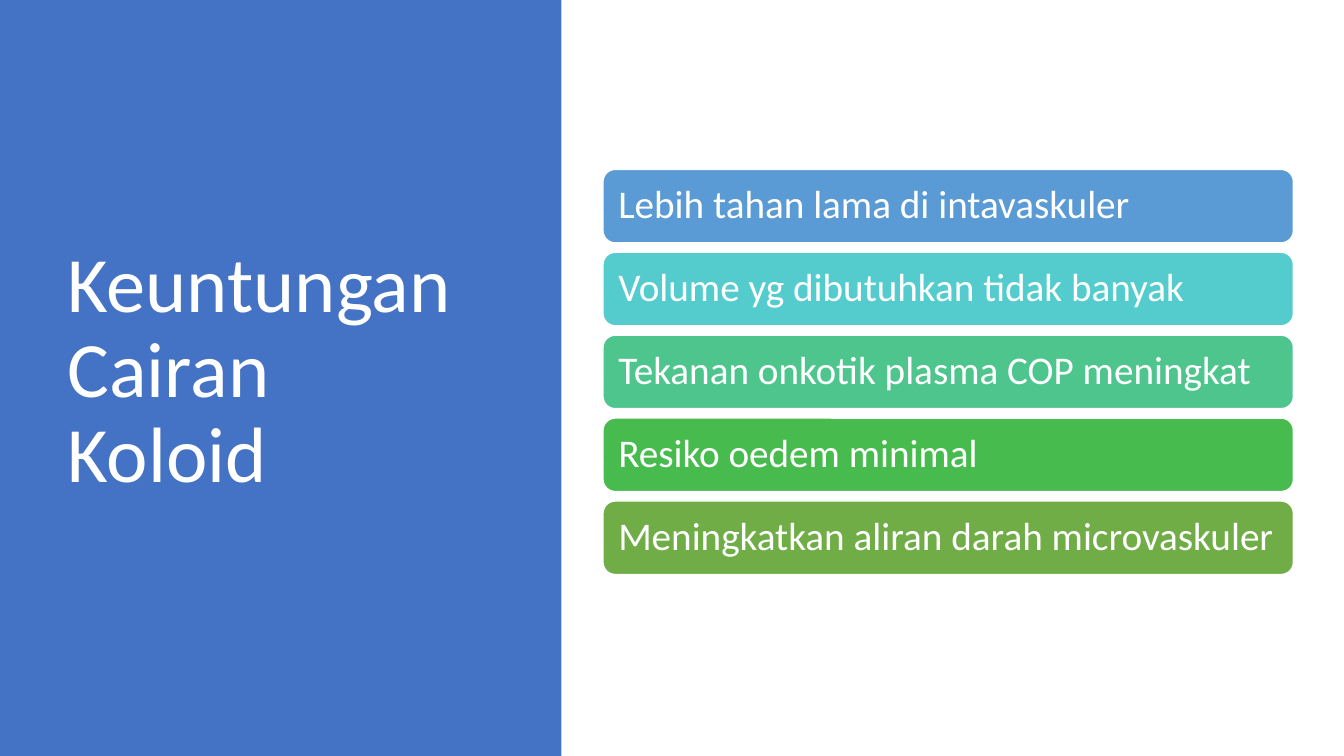
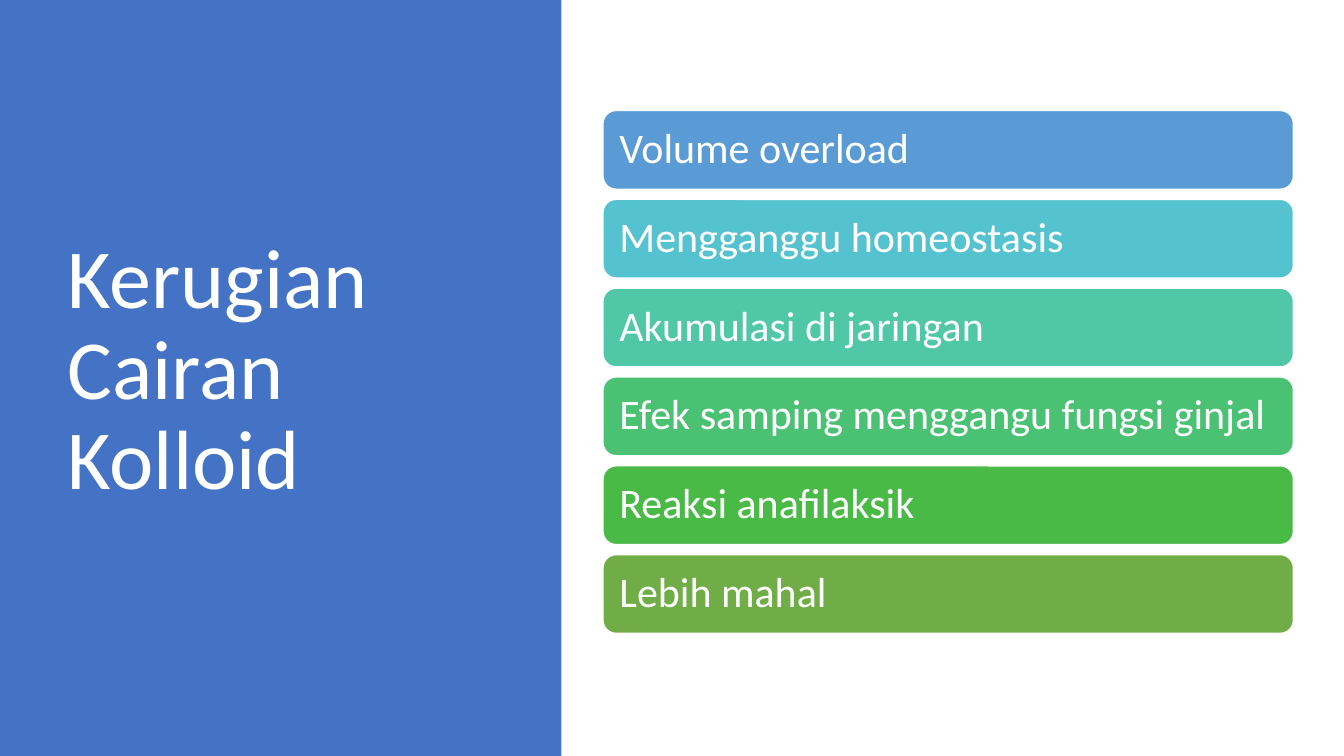
from pptx import Presentation
from pptx.dml.color import RGBColor
from pptx.enum.shapes import MSO_SHAPE
from pptx.enum.text import MSO_ANCHOR, MSO_AUTO_SIZE, PP_ALIGN
from pptx.util import Pt

WHITE = RGBColor(0xFF, 0xFF, 0xFF)
NAVY = RGBColor(0x44, 0x72, 0xC4)
BLUE = RGBColor(0x5B, 0x9B, 0xD5)
AQUA = RGBColor(0x54, 0xCC, 0xCD)
TEAL = RGBColor(0x55, 0xC3, 0xCF)
MINT = RGBColor(0x4D, 0xC5, 0x8D)
JADE = RGBColor(0x50, 0xC8, 0xA7)
FERN = RGBColor(0x4B, 0xC1, 0x74)
LEAF = RGBColor(0x48, 0xBB, 0x4F)
LIME = RGBColor(0x4A, 0xBA, 0x46)
MOSS = RGBColor(0x70, 0xAD, 0x47)

WIDE, HIGH = 960, 540


def write(frame, text, size, color=WHITE, font="Calibri", inset=None):
    frame.word_wrap = True
    frame.auto_size = MSO_AUTO_SIZE.NONE
    frame.vertical_anchor = MSO_ANCHOR.MIDDLE
    if inset is not None:
        frame.margin_left = frame.margin_right = Pt(inset)
        frame.margin_top = frame.margin_bottom = Pt(inset)
    para = frame.paragraphs[0]
    para.alignment = PP_ALIGN.LEFT
    para.line_spacing = 0.9
    para.space_before = Pt(0)
    run = para.add_run()
    run.text = text
    run.font.size = Pt(size)
    run.font.name = font
    run.font.color.rgb = color


class Deck:
    def __init__(self):
        self.file = Presentation()
        self.file.slide_width = Pt(WIDE)
        self.file.slide_height = Pt(HIGH)
        self.slide = None

    def page(self, title, size):
        self.slide = self.file.slides.add_slide(self.file.slide_layouts[5])
        self.band()
        self.title(title, size)

    def shape(self, kind, left, top, width, height, fill):
        item = self.slide.shapes.add_shape(
            kind, Pt(left), Pt(top), Pt(width), Pt(height))
        item.shadow.inherit = False
        item.fill.solid()
        item.fill.fore_color.rgb = fill
        return item

    def band(self):
        band = self.shape(MSO_SHAPE.RECTANGLE, 0, 0, 401, HIGH, NAVY)
        band.line.fill.background()
        self.slide.shapes._spTree.insert(2, band._element)

    def title(self, text, size):
        head = self.slide.shapes.title
        head.left, head.top = Pt(41), Pt(49)
        head.width, head.height = Pt(299.5), Pt(433.5)
        write(head.text_frame, text, size)

    def bar(self, text, top, height, size, fill):
        bar = self.shape(MSO_SHAPE.ROUNDED_RECTANGLE,
                         430.7, top, 493.2, height, fill)
        bar.line.color.rgb = WHITE
        bar.line.width = Pt(1)
        write(bar.text_frame, text, size, inset=0.3 * size)

    def stack(self, rows, size, middle=265.7):
        height, step = 1.875 * size, 2.115 * size
        top = middle - ((len(rows) - 1) * step + height) / 2
        for index, (text, fill) in enumerate(rows):
            self.bar(text, top + index * step, height, size, fill)


def main():
    deck = Deck()

    deck.page("Keuntungan Cairan Koloid", 56)
    deck.stack([
        ("Lebih tahan lama di intavaskuler", BLUE),
        ("Volume yg dibutuhkan tidak banyak", AQUA),
        ("Tekanan onkotik plasma COP meningkat", MINT),
        ("Resiko oedem minimal", LEAF),
        ("Meningkatkan aliran darah microvaskuler", MOSS),
    ], 28)

    deck.page("Kerugian Cairan Kolloid", 60)
    deck.stack([
        ("Volume overload", BLUE),
        ("Mengganggu homeostasis", TEAL),
        ("Akumulasi di jaringan", JADE),
        ("Efek samping menggangu fungsi ginjal", FERN),
        ("Reaksi anafilaksik", LIME),
        ("Lebih mahal", MOSS),
    ], 30)

    deck.file.save("out.pptx")


if __name__ == "__main__":
    main()
